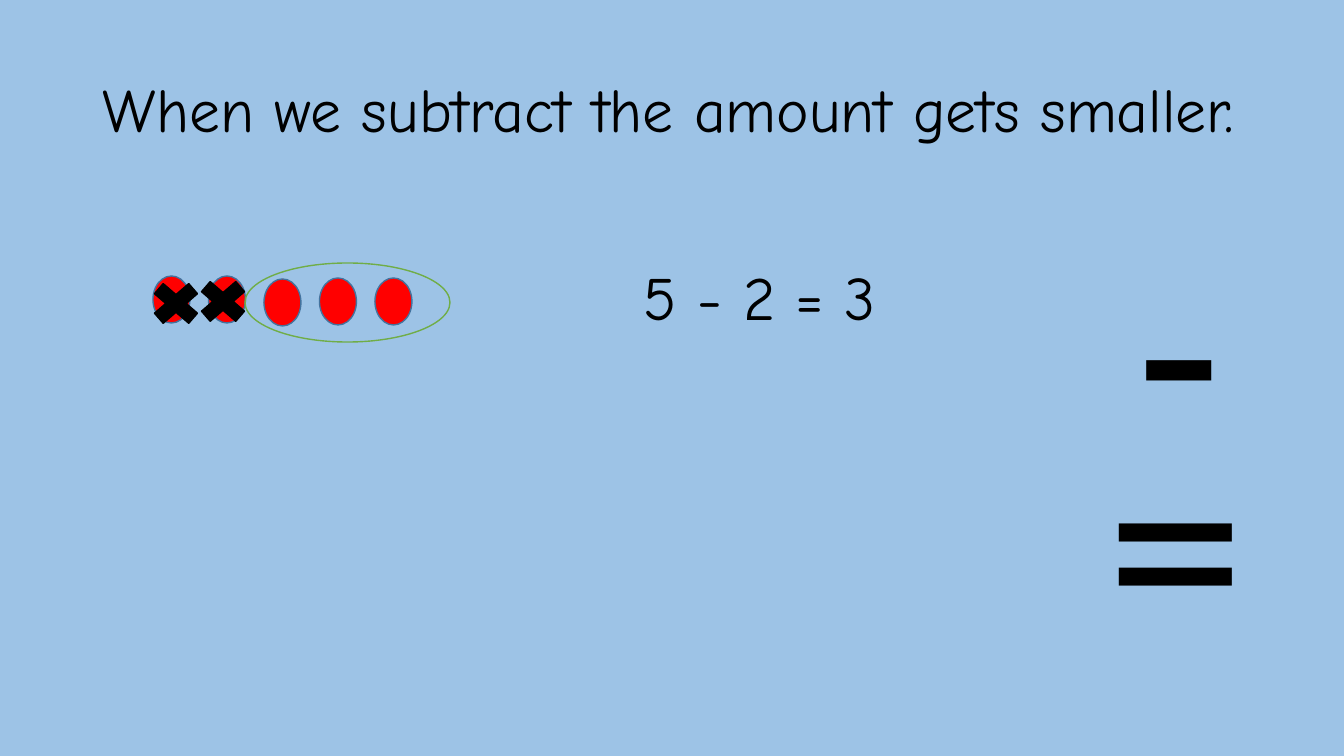
"""Build a slide showing that subtracting makes an amount smaller."""
from pptx import Presentation
from pptx.dml.color import RGBColor
from pptx.enum.shapes import MSO_SHAPE
from pptx.enum.text import MSO_ANCHOR, PP_ALIGN
from pptx.util import Emu, Pt

COLOURS = {
    "background": "9DC3E6",
    "text": "000000",
    "counter": "FF0000",
    "counter_line": "43739E",
    "cross": "000000",
    "ring": "70AD47",
}
EMU_PER_PX = 914400 / 100.8
SLIDE_SIZE = (1344, 756)

COUNTER_LEFT, COUNTER_STEP, COUNTER_SIZE = 153, 55.5, (37, 47)
COUNTER_TOPS = [276, 276, 279, 278, 278]
CROSS_SIZE = (66, 57)
CROSS_POSITIONS = [(143, 275), (190, 273)]
RING_BOX = (245, 263, 205, 79)

HEADING = {"name": "Comic Neue", "size": Pt(44)}
SYMBOL = {"name": "Calibri", "size": Pt(199)}
SYMBOL_SPACING = {"line_spacing": 0.8, "space_before": Pt(10)}
TITLE = ("When we subtract the amount gets smaller.", (93, 40, 1159, 146), HEADING,
         {"line_spacing": 0.9}, MSO_ANCHOR.MIDDLE)
SYMBOLS_AND_SUM = [
    ("-", (1085, 231, 188, 301), SYMBOL,
     {**SYMBOL_SPACING, "alignment": PP_ALIGN.CENTER}, MSO_ANCHOR.TOP),
    ("=", (1097, 425, 188, 301), SYMBOL, SYMBOL_SPACING, MSO_ANCHOR.TOP),
    ("5 - 2 = 3", (634, 254, 519, 115), HEADING, {}, MSO_ANCHOR.TOP),
]


def px(length):
    return Emu(round(length * EMU_PER_PX))


def colour(name):
    return RGBColor.from_string(COLOURS[name])


def set_format(target, values):
    for name, value in values.items():
        setattr(target, name, value)


def add_text(slide, text, box, font, paragraph_format, anchor):
    frame = slide.shapes.add_textbox(*map(px, box)).text_frame
    set_format(frame, {"word_wrap": True, "vertical_anchor": anchor})
    paragraph = frame.paragraphs[0]
    set_format(paragraph, paragraph_format)
    run = paragraph.add_run()
    run.text = text
    set_format(run.font, font)
    run.font.color.rgb = colour("text")


def add_figure(slide, kind, box, line, fill=None):
    shape = slide.shapes.add_shape(kind, *map(px, box))
    shape.shadow.inherit = False
    if fill:
        shape.fill.solid()
        shape.fill.fore_color.rgb = colour(fill)
    else:
        shape.fill.background()
    shape.line.color.rgb = colour(line)
    shape.line.width = Pt(1)


def main():
    presentation = Presentation()
    presentation.slide_width, presentation.slide_height = map(px, SLIDE_SIZE)
    slide = presentation.slides.add_slide(presentation.slide_layouts[6])
    slide.background.fill.solid()
    slide.background.fill.fore_color.rgb = colour("background")

    add_text(slide, *TITLE)
    for index, top in enumerate(COUNTER_TOPS):
        left = COUNTER_LEFT + index * COUNTER_STEP
        add_figure(slide, MSO_SHAPE.OVAL, (left, top, *COUNTER_SIZE), "counter_line", "counter")
    for entry in SYMBOLS_AND_SUM:
        add_text(slide, *entry)
    for position in CROSS_POSITIONS:
        add_figure(slide, MSO_SHAPE.MATH_MULTIPLY, (*position, *CROSS_SIZE), "cross", "cross")
    add_figure(slide, MSO_SHAPE.OVAL, RING_BOX, "ring")

    presentation.save("out.pptx")


if __name__ == "__main__":
    main()
